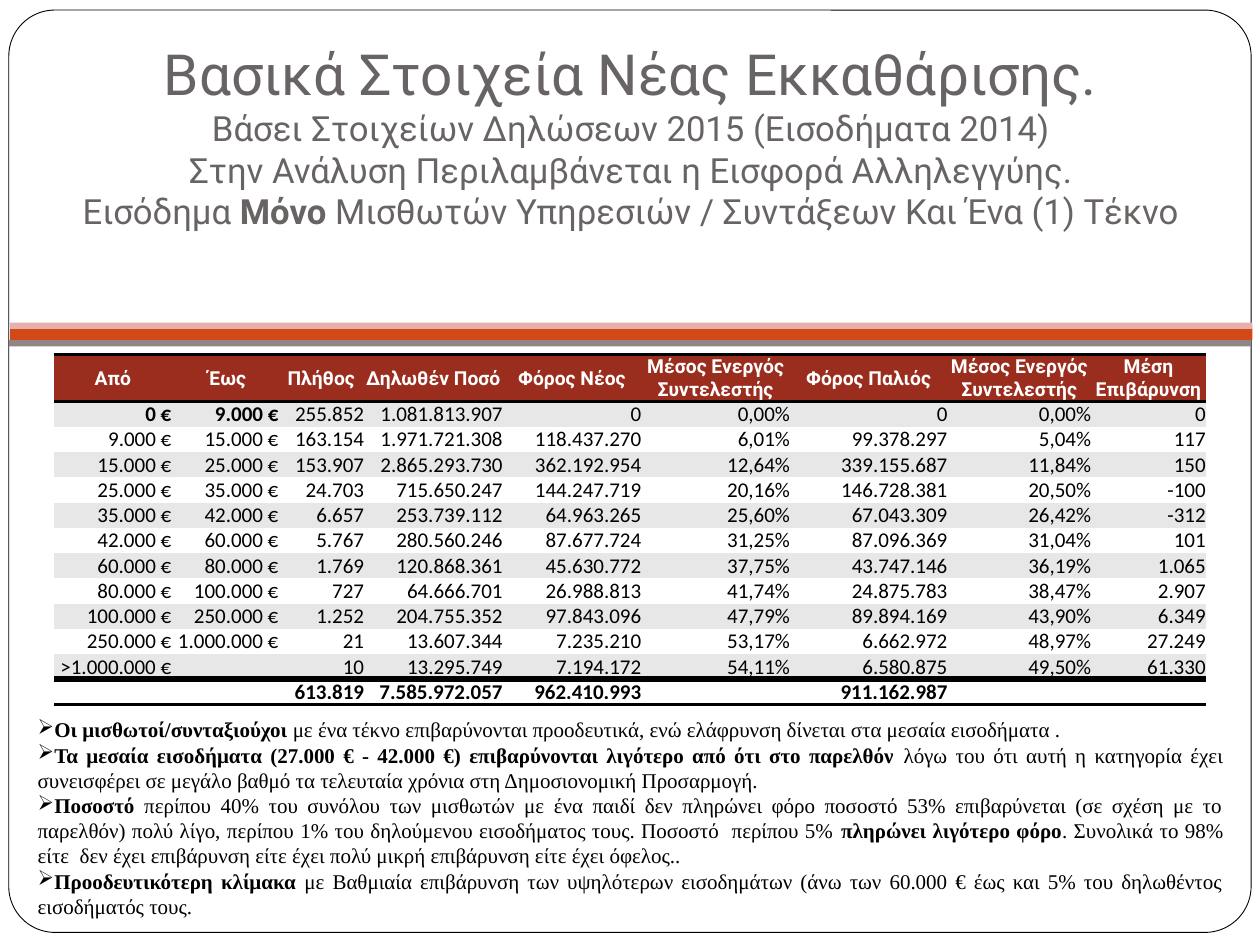
import lxml.etree
import pptx
import pptx.dml.color
import pptx.enum.shapes
import pptx.enum.text
import pptx.oxml.ns
import pptx.util

Inches = pptx.util.Inches
Pt = pptx.util.Pt
Align = pptx.enum.text.PP_ALIGN
Anchor = pptx.enum.text.MSO_ANCHOR
Shape = pptx.enum.shapes.MSO_SHAPE
qn = pptx.oxml.ns.qn

COLORS = {
    "white": "FFFFFF", "black": "000000", "title": "696464", "head": "9B2D1F",
    "band": "E7E7E7", "orange": "D34817", "pink": "E6B1AC", "grey": "918485",
}
NO_STYLE = "{2D5ABB26-0587-4C30-8999-92F81FD0307C}"

TITLE = [
    [("Βασικά Στοιχεία Νέας Εκκαθάρισης.", 32.4, False)],
    [("Βάσει Στοιχείων Δηλώσεων 2015 (Εισοδήματα 2014)", 19.8, False)],
    [("Στην Ανάλυση Περιλαμβάνεται η Εισφορά Αλληλεγγύης.", 19.8, False)],
    [("Εισόδημα ", 19.8, False), ("Μόνο", 19.8, True),
     (" Μισθωτών Υπηρεσιών / Συντάξεων Και Ένα (1) Τέκνο", 19.8, False)],
]
WIDTHS = [0.93, 0.85, 0.68, 1.1, 1.1, 1.18, 1.25, 1.14, 0.91]
HEADS = ["Από", " Έως", "Πλήθος", "Δηλωθέν Ποσό", "Φόρος Νέος",
         "Μέσος Ενεργός Συντελεστής", "Φόρος Παλιός",
         "Μέσος Ενεργός Συντελεστής", "Μέση Επιβάρυνση"]
ROWS = [
    "0 €|9.000 €|255.852|1.081.813.907|0|0,00%|0|0,00%|0",
    "9.000 €|15.000 €|163.154|1.971.721.308|118.437.270|6,01%|99.378.297|5,04%|117",
    "15.000 €|25.000 €|153.907|2.865.293.730|362.192.954|12,64%|339.155.687|11,84%|150",
    "25.000 €|35.000 €|24.703|715.650.247|144.247.719|20,16%|146.728.381|20,50%|-100",
    "35.000 €|42.000 €|6.657|253.739.112|64.963.265|25,60%|67.043.309|26,42%|-312",
    "42.000 €|60.000 €|5.767|280.560.246|87.677.724|31,25%|87.096.369|31,04%|101",
    "60.000 €|80.000 €|1.769|120.868.361|45.630.772|37,75%|43.747.146|36,19%|1.065",
    "80.000 €|100.000 €|727|64.666.701|26.988.813|41,74%|24.875.783|38,47%|2.907",
    "100.000 €|250.000 €|1.252|204.755.352|97.843.096|47,79%|89.894.169|43,90%|6.349",
    "250.000 €|1.000.000 €|21|13.607.344|7.235.210|53,17%|6.662.972|48,97%|27.249",
    ">1.000.000 €||10|13.295.749|7.194.172|54,11%|6.580.875|49,50%|61.330",
    "||613.819|7.585.972.057|962.410.993||911.162.987||",
]
NOTES = [
    [("Οι μισθωτοί/συνταξιούχοι ", True),
     ("με ένα τέκνο επιβαρύνονται προοδευτικά, ενώ ελάφρυνση δίνεται στα "
      "μεσαία εισοδήματα .", False)],
    [("Τα μεσαία εισοδήματα (27.000 € - 42.000 €) επιβαρύνονται λιγότερο από "
      "ότι στο παρελθόν ", True),
     ("λόγω του ότι αυτή η κατηγορία έχει συνεισφέρει σε μεγάλο βαθμό τα "
      "τελευταία χρόνια στη Δημοσιονομική Προσαρμογή.", False)],
    [("Ποσοστό ", True),
     ("περίπου 40% του συνόλου των μισθωτών με ένα παιδί δεν πληρώνει φόρο "
      "ποσοστό 53% επιβαρύνεται (σε σχέση με το παρελθόν) πολύ λίγο, περίπου "
      "1% του δηλούμενου εισοδήματος τους. Ποσοστό  περίπου 5% ", False),
     ("πληρώνει λιγότερο φόρο", True),
     (". Συνολικά το 98% είτε  δεν έχει επιβάρυνση είτε έχει πολύ μικρή "
      "επιβάρυνση είτε έχει όφελος..", False)],
    [("Προοδευτικότερη κλίμακα ", True),
     ("με Βαθμιαία επιβάρυνση των υψηλότερων εισοδημάτων (άνω των 60.000 € "
      "έως και 5% του δηλωθέντος εισοδήματός τους.", False)],
]


def rgb(name):
    return pptx.dml.color.RGBColor.from_string(COLORS[name])


def add_run(para, text, size, font, color, bold=False):
    run = para.add_run()
    run.text = text
    run.font.size = Pt(size)
    run.font.name = font
    run.font.bold = bold
    run.font.color.rgb = rgb(color)


def add_block(slide, kind, box, color):
    shape = slide.shapes.add_shape(kind, *map(Inches, box))
    shape.shadow.inherit = False
    shape.fill.solid()
    shape.fill.fore_color.rgb = rgb(color)
    shape.line.fill.background()
    return shape


def add_frame(slide):
    """Draw the rounded page border and the three stripes."""
    page = add_block(slide, Shape.ROUNDED_RECTANGLE,
                     (0.07, 0.08, 9.86, 7.32), "white")
    page.adjustments[0] = 0.05
    page.line.color.rgb = rgb("black")
    page.line.width = Pt(0.5)
    stripes = [(0.08, 2.6, 0.1, "orange"), (0.08, 2.56, 0.05, "pink"),
               (0.07, 2.7, 0.05, "grey")]
    for left, top, height, color in stripes:
        add_block(slide, Shape.RECTANGLE, (left, top, 9.86, height), color)


def fill_title(slide):
    title = slide.shapes.title
    slide.shapes._spTree.append(title._element)  # in front of the frame
    title.left, title.top = Inches(0.2), Inches(0.44)
    title.width, title.height = Inches(9.61), Inches(1.5)
    frame = title.text_frame
    frame.auto_size = pptx.enum.text.MSO_AUTO_SIZE.NONE
    frame.word_wrap = True
    frame.vertical_anchor = Anchor.BOTTOM
    frame.margin_bottom = Inches(0.1)
    para = frame.paragraphs[0]
    para.alignment = Align.CENTER
    for i, line in enumerate(TITLE):
        if i:
            para.add_line_break()
        for text, size, bold in line:
            add_run(para, text, size, "Roboto", "title", bold)


def add_notes(slide):
    box = slide.shapes.add_textbox(
        Inches(0.2), Inches(5.64), Inches(9.61), Inches(1.72))
    frame = box.text_frame
    frame.word_wrap = True
    for i, note in enumerate(NOTES):
        para = frame.add_paragraph() if i else frame.paragraphs[0]
        para.alignment = Align.JUSTIFY
        props = para._p.get_or_add_pPr()
        props.set("marL", "0")
        props.set("indent", "0")
        lxml.etree.SubElement(props, qn("a:buChar")).set("char", "➢")
        for text, bold in note:
            add_run(para, text, 12, "Times New Roman", "black", bold)


def set_rules(cell, top, bottom):
    """Give a cell black top and bottom borders, in points."""
    props = cell._tc.get_or_add_tcPr()
    for i, (tag, width) in enumerate((("a:lnT", top), ("a:lnB", bottom))):
        line = lxml.etree.Element(qn(tag), w=str(Pt(width)))
        fill = lxml.etree.SubElement(line, qn("a:solidFill"))
        color = lxml.etree.SubElement(fill, qn("a:srgbClr"))
        color.set("val", COLORS["black"])
        props.insert(i, line)


def set_cell(cell, text, size, font, color, bold, align, fill, pad):
    cell.fill.solid()
    cell.fill.fore_color.rgb = rgb(fill)
    cell.vertical_anchor = Anchor.MIDDLE
    cell.margin_left = cell.margin_right = cell.margin_top = Inches(pad)
    cell.margin_bottom = 0
    para = cell.text_frame.paragraphs[0]
    para.alignment = align
    if text:
        add_run(para, text, size, font, color, bold)
    else:  # keeps an empty cell from stretching its row
        end = lxml.etree.SubElement(para._p, qn("a:endParaRPr"))
        end.set("sz", str(size * 100))


def add_grid(slide):
    rows = [line.split("|") for line in ROWS]
    last = len(rows)
    table = slide.shapes.add_table(
        last + 1, len(HEADS), Inches(0.43), Inches(2.81),
        Inches(9.13), Inches(2.77)).table
    table._tbl.tblPr.find(qn("a:tableStyleId")).text = NO_STYLE
    for col, width in zip(table.columns, WIDTHS):
        col.width = Inches(width)
    for i, row in enumerate(table.rows):
        row.height = Inches(0.2 if i else 0.37)
    for c, text in enumerate(HEADS):
        cell = table.cell(0, c)
        set_cell(cell, text, 11, "Roboto", "white", True,
                 Align.CENTER, "head", 0.01)
        set_rules(cell, 2, 2)
    for r, row in enumerate(rows, 1):
        for c, text in enumerate(row):
            bold = r == last or (r == 1 and c < 2)
            set_cell(table.cell(r, c), text, 12, "Calibri", "black", bold,
                     Align.RIGHT, "band" if r % 2 else "white", 0)
    for c in range(len(HEADS)):
        set_rules(table.cell(last, c), 4, 2)


def main():
    deck = pptx.Presentation()
    deck.slide_width, deck.slide_height = Inches(10), Inches(7.5)
    slide = deck.slides.add_slide(deck.slide_layouts[5])
    add_frame(slide)
    fill_title(slide)
    add_notes(slide)
    add_grid(slide)
    deck.save("out.pptx")


if __name__ == "__main__":
    main()
